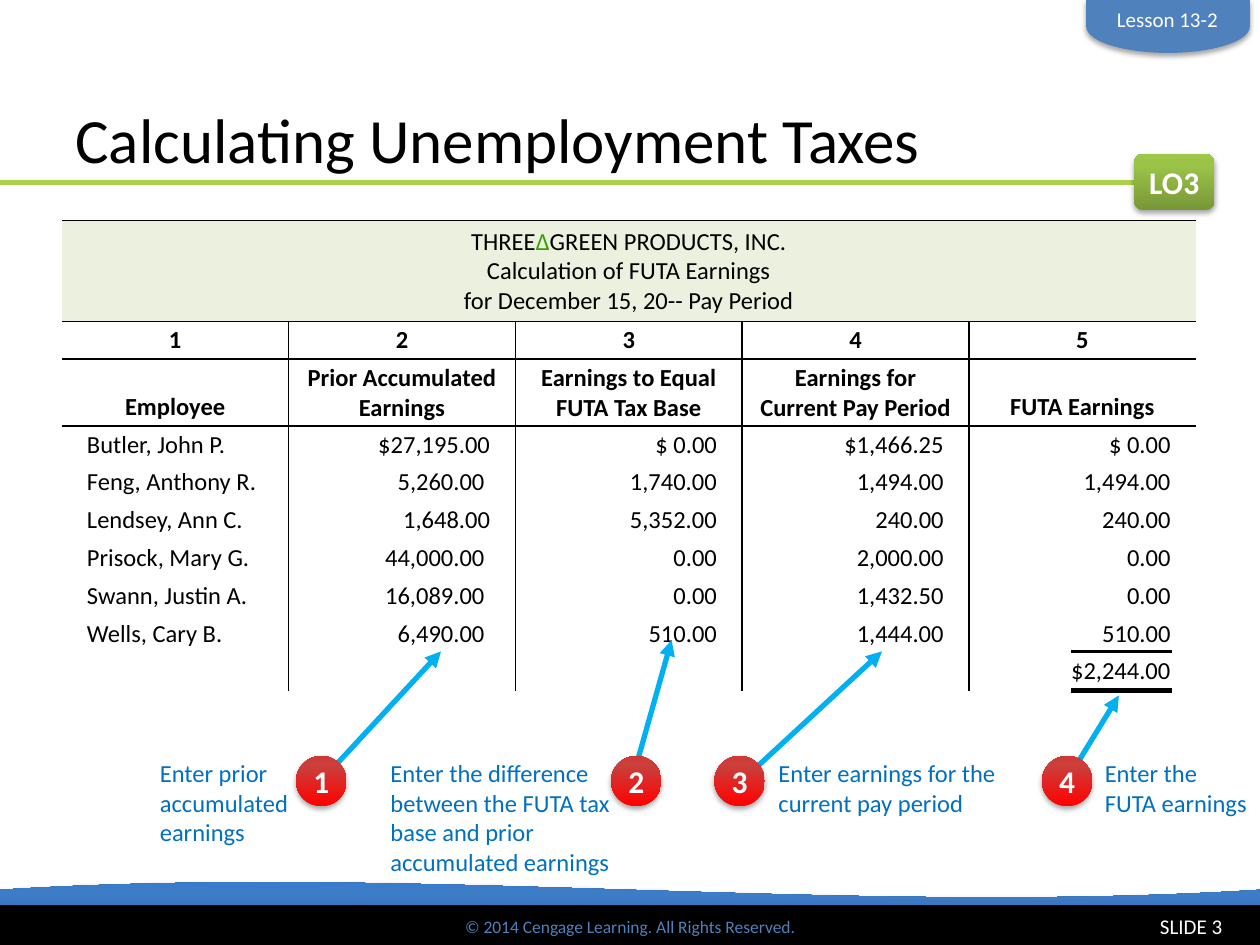
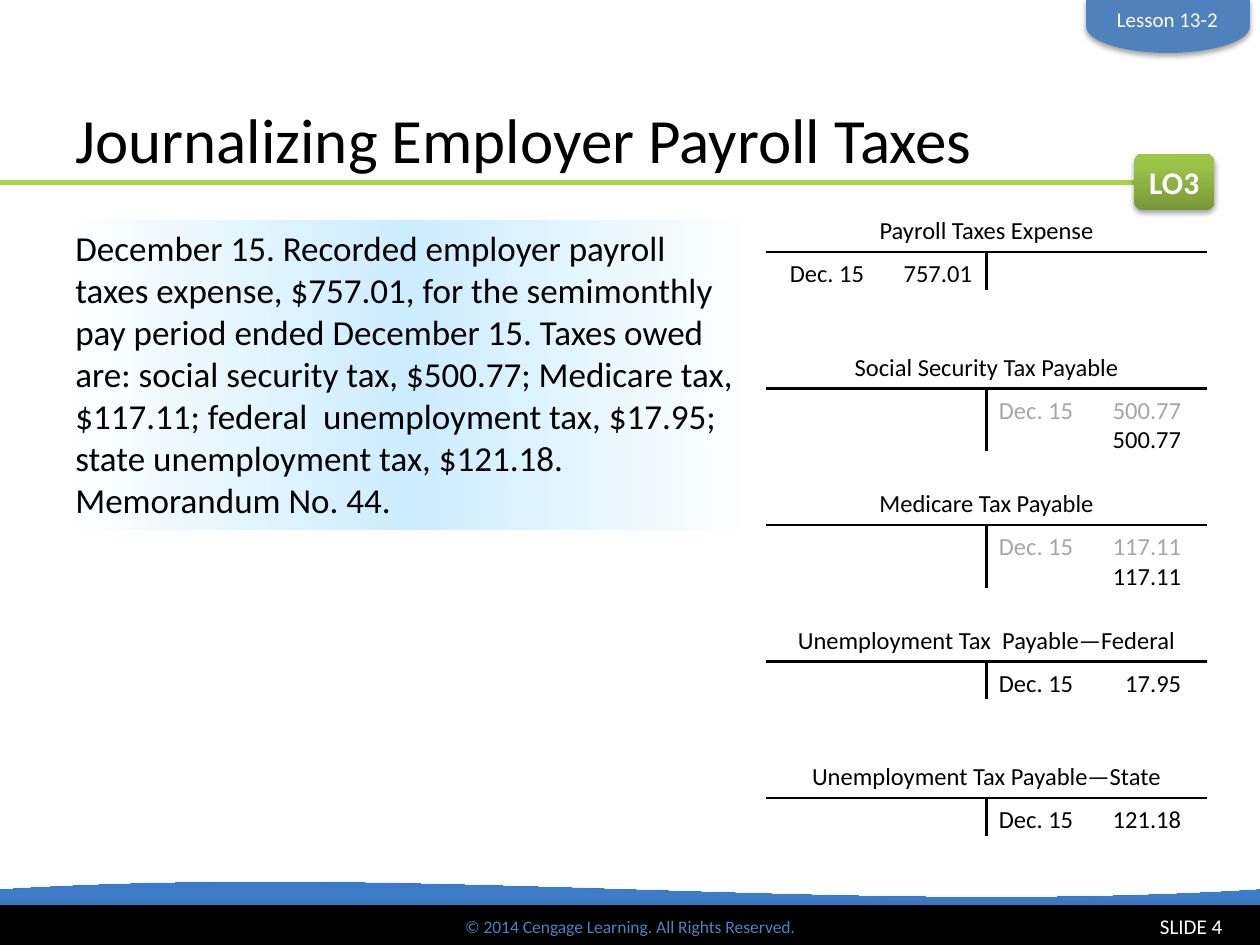
from lxml import etree
from pptx import Presentation
from pptx.dml.color import RGBColor
from pptx.enum.shapes import MSO_CONNECTOR, MSO_SHAPE
from pptx.enum.text import MSO_ANCHOR, PP_ALIGN
from pptx.oxml.ns import qn
from pptx.util import Inches, Pt

# Shared look
FONT = "Calibri"
BLACK, WHITE, GRAY = "000000", "FFFFFF", "A6A6A6"
TAB_BLUE, CALLOUT_BLUE, ARROW_BLUE = "4F81BD", "0070C0", "00B0F0"
RULE_GREEN, HEADING_FILL, DELTA_GREEN = "AAD24B", "EBF1DE", "389F00"
WAVE_STOPS = [(0, "2F5F99"), (80, "3D7CC7"), (100, "3A7CCB")]
BADGE_STOPS = [(0, "779737"), (80, "9BC348"), (100, "9DC746")]
CIRCLE_STOPS = [(0, "FF0000"), (80, "CB3E3A"), (100, "CE3B37")]
ENTRY_STOPS = [(0, WHITE), (50, "CCECFF"), (100, WHITE)]
LEFT, CENTER, RIGHT = PP_ALIGN.LEFT, PP_ALIGN.CENTER, PP_ALIGN.RIGHT
TOP, MIDDLE, BOTTOM = MSO_ANCHOR.TOP, MSO_ANCHOR.MIDDLE, MSO_ANCHOR.BOTTOM

COPYRIGHT = "© 2014 Cengage Learning. All Rights Reserved."
LESSON, OBJECTIVE, FIRST_NUMBER = "Lesson 13-2", "LO3", 3

# Slide content
FUTA_TITLE = "Calculating Unemployment Taxes"
FUTA_HEADING = [
    [("THREE", BLACK), ("Δ", DELTA_GREEN), ("GREEN PRODUCTS, INC.", BLACK)],
    "Calculation of FUTA Earnings",
    "for December 15, 20-- Pay Period",
]
FUTA_ROWS = [
    ["1", "2", "3", "4", "5"],
    ["Employee", "Prior Accumulated\nEarnings", "Earnings to Equal FUTA Tax Base",
     "Earnings for Current Pay Period", "FUTA Earnings"],
    ["Butler, John P.", "$27,195.00", "$ 0.00", "$1,466.25", "$ 0.00"],
    ["Feng, Anthony R.", "5,260.00 ", "1,740.00", "1,494.00", "1,494.00"],
    ["Lendsey, Ann C.", "1,648.00", "5,352.00", "240.00", "240.00"],
    ["Prisock, Mary G.", "44,000.00 ", "0.00", "2,000.00", "0.00"],
    ["Swann, Justin A.", "16,089.00 ", "0.00", "1,432.50", "0.00"],
    ["Wells, Cary B.", "6,490.00 ", "510.00", "1,444.00", "510.00"],
    ["", "", "", "", "$2,244.00"],
]
ROW_HEIGHTS = [0.8, 0.3, 0.53] + [0.3] * 7

# Callouts: text, text left, text width, circle left, arrow start, arrow end
CALLOUTS = [
    ("Enter prior accumulated\vearnings", 1.17, 1.25, 2.35, (2.5, 6.25), (3.5, 5.17)),
    ("Enter the difference between the FUTA tax base and prior accumulated earnings",
     3, 2.08, 4.85, (5, 6.25), (5.33, 5.08)),
    ("Enter earnings for the current pay period", 6.08, 2, 5.67, (5.83, 6.25), (7, 5.17)),
    ("Enter the FUTA earnings", 8.67, 1.33, 8.27, (8.47, 6.19), (8.88, 5.52)),
]

JOURNAL_TITLE = "Journalizing Employer Payroll Taxes"
JOURNAL_ENTRY = (
    "December 15. Recorded employer payroll taxes expense, $757.01, for the semimonthly "
    "pay period ended December 15. Taxes owed are: social security tax, $500.77; "
    "Medicare tax, $117.11; federal  unemployment tax, $17.95; "
    "state unemployment tax, $121.18. Memorandum No. 44."
)
# T accounts: name, left edge of the entries, entries
DEBIT, CREDIT = 6.17, 7.83
ACCOUNTS = [
    ("Payroll Taxes Expense", DEBIT, ["Dec. 15\t 757.01"]),
    ("Social Security Tax Payable", CREDIT, [[("Dec. 15\t500.77", GRAY)], "\t 500.77"]),
    ("Medicare Tax Payable", CREDIT, [[("Dec. 15\t117.11", GRAY)], "\t117.11"]),
    ("Unemployment Tax  Payable—Federal", CREDIT, ["Dec. 15\t 17.95"]),
    ("Unemployment Tax Payable—State", CREDIT, ["Dec. 15\t 121.18"]),
]


def rgb(color):
    return RGBColor.from_string(color)


def add_xml(parent, tag, **attributes):
    child = etree.SubElement(parent, qn(tag))
    for name, value in attributes.items():
        child.set(name, str(value))
    return child


def write(frame, text, size=14, color=BLACK, bold=False, align=LEFT, anchor=TOP,
          wrap=True, insets=None, tab=None):
    """Fill a frame; text is a string or a list of lines (strings or coloured spans)."""
    frame.word_wrap = wrap
    frame.vertical_anchor = anchor
    if insets:
        (frame.margin_left, frame.margin_top,
         frame.margin_right, frame.margin_bottom) = [Inches(inset) for inset in insets]
    lines = text.split("\n") if isinstance(text, str) else text
    for index, line in enumerate(lines):
        para = frame.paragraphs[0] if index == 0 else frame.add_paragraph()
        para.alignment = align
        if tab:
            stops = add_xml(para._p.get_or_add_pPr(), "a:tabLst")
            add_xml(stops, "a:tab", pos=Inches(tab), algn="dec")
        colors = None
        if isinstance(line, str):
            para.text = line
        else:
            colors = [span_color for _, span_color in line]
            for span_text, _ in line:
                para.add_run().text = span_text
        for number, span in enumerate(para.runs):
            span.font.name, span.font.size, span.font.bold = FONT, Pt(size), bold
            span.font.color.rgb = rgb(colors[number] if colors else color)
        if not para.runs:
            add_xml(para._p, "a:endParaRPr", sz=size * 100)


def add_text(page, place, text, **text_format):
    box = page.shapes.add_textbox(*[Inches(length) for length in place])
    write(box.text_frame, text, **text_format)


def add_box(page, kind, place, fill=None, stops=None, angle=270, line=None,
            shadow=False, text=None, **text_format):
    box = page.shapes.add_shape(kind, *[Inches(length) for length in place])
    box.shadow.inherit = False
    if stops:
        box.fill.gradient()
        box.fill.gradient_angle = 360 - angle  # the setter counts counter-clockwise
        stop_list = box._element.spPr.find(".//" + qn("a:gsLst"))
        for stop in list(stop_list):
            stop_list.remove(stop)
        for position, color in stops:
            stop = add_xml(stop_list, "a:gs", pos=position * 1000)
            add_xml(stop, "a:srgbClr", val=color)
    else:
        box.fill.solid()
        box.fill.fore_color.rgb = rgb(fill)
    if line:
        box.line.color.rgb, box.line.width = rgb(line), Pt(2)
    else:
        box.line.fill.background()
    if shadow:
        effects = box._element.spPr.find(qn("a:effectLst"))
        outer = add_xml(effects, "a:outerShdw", blurRad=Pt(3.1), dist=Pt(1.8),
                        dir=5400000, rotWithShape=0)
        add_xml(add_xml(outer, "a:srgbClr", val=BLACK), "a:alpha", val=35000)
    if text:
        write(box.text_frame, text, **text_format)
    return box


def add_line(page, start, end, color=BLACK, width=1.5, arrow=False):
    line = page.shapes.add_connector(
        MSO_CONNECTOR.STRAIGHT, *[Inches(length) for length in (*start, *end)])
    line.line.color.rgb, line.line.width = rgb(color), Pt(width)
    properties = line._element.spPr
    if arrow:
        add_xml(properties.find(qn("a:ln")), "a:tailEnd", type="triangle")
    add_xml(properties, "a:effectLst")


def add_page(deck, title, number):
    """Start a slide with its footer, title rule, lesson tab and objective badge."""
    page = deck.slides.add_slide(deck.slide_layouts[6])
    add_box(page, MSO_SHAPE.WAVE, (0, 7, 10, 0.5), stops=WAVE_STOPS, shadow=True)
    add_box(page, MSO_SHAPE.RECTANGLE, (0, 7.2, 10, 0.3), fill=BLACK, line=BLACK,
            text=COPYRIGHT, size=10, color=TAB_BLUE, align=CENTER, anchor=MIDDLE)
    add_line(page, (0, 1.45), (9.5, 1.45), RULE_GREEN, 3)
    add_text(page, (0.5, 0.2, 8.5, 1.25), title, size=36, anchor=BOTTOM)
    add_box(page, MSO_SHAPE.RECTANGLE, (7.8, 7.2, 2, 0.3), fill=BLACK,
            text=f"SLIDE {number}", size=12, color=WHITE, align=RIGHT, anchor=MIDDLE)
    add_box(page, MSO_SHAPE.ROUNDED_RECTANGLE, (9, 1.22, 0.64, 0.45), stops=BADGE_STOPS,
            shadow=True, text=OBJECTIVE, size=18, color=WHITE, bold=True,
            align=CENTER, wrap=False)
    lesson_tab = add_box(page, MSO_SHAPE.FLOWCHART_DELAY, (9.06, -0.44, 0.42, 1.3),
                         fill=TAB_BLUE, shadow=True)
    lesson_tab.rotation = 90
    add_text(page, (8.76, 0, 1.01, 0.3), LESSON, size=12, color=WHITE,
             align=CENTER, wrap=False)
    return page


def format_cell(cell, text, borders, fill=None, insets=(0.1, 0.05, 0.1, 0.05),
                **text_format):
    (cell.margin_left, cell.margin_top,
     cell.margin_right, cell.margin_bottom) = [Inches(inset) for inset in insets]
    cell.vertical_anchor = text_format.pop("anchor", TOP)
    write(cell.text_frame, text, **text_format)
    properties = cell._tc.get_or_add_tcPr()
    for side in "LRTB":
        edge = add_xml(properties, f"a:ln{side}", w=Pt(1))
        if side in borders:
            add_xml(add_xml(edge, "a:solidFill"), "a:srgbClr", val=BLACK)
        else:
            add_xml(edge, "a:noFill")
    if fill:
        cell.fill.solid()
        cell.fill.fore_color.rgb = rgb(fill)
    else:
        cell.fill.background()


def add_futa_table(page):
    columns = len(FUTA_ROWS[0])
    frame = page.shapes.add_table(len(ROW_HEIGHTS), columns, Inches(0.49), Inches(1.75),
                                  Inches(9), Inches(sum(ROW_HEIGHTS)))
    table = frame.table
    table.first_row = table.horz_banding = False
    for row, height in zip(table.rows, ROW_HEIGHTS):
        row.height = Inches(height)
    for column in range(columns):
        format_cell(table.cell(0, column), FUTA_HEADING if column == 0 else "", "TB",
                    fill=HEADING_FILL, align=CENTER, anchor=MIDDLE)
    table.cell(0, 0).merge(table.cell(0, columns - 1))
    for row, values in enumerate(FUTA_ROWS, start=1):
        for column, value in enumerate(values):
            borders = ("L" if column else "") + ("R" if column < columns - 1 else "")
            if row <= 2:
                format_cell(table.cell(row, column), value, borders + "TB", bold=True,
                            align=CENTER, anchor=BOTTOM, insets=(0.1, 0.03, 0.1, 0.03))
            else:
                format_cell(table.cell(row, column), value,
                            borders + ("T" if row == 3 else ""),
                            align=RIGHT if column else LEFT, insets=(0.2, 0.03, 0.2, 0.03))


def add_callout(page, number, text, left, width, circle_left, start, end):
    add_text(page, (left, 5.97, width, 0.81), text, color=CALLOUT_BLUE)
    add_line(page, start, end, ARROW_BLUE, 3, arrow=True)
    add_box(page, MSO_SHAPE.OVAL, (circle_left, 6, 0.4, 0.4), stops=CIRCLE_STOPS,
            shadow=True, text=str(number), size=18, color=WHITE, bold=True,
            align=CENTER, anchor=MIDDLE, insets=(0, 0, 0, 0))


def add_account(page, top, name, entry_left, entries):
    left, width, middle = 6.08, 3.5, 7.83
    add_text(page, (left, top - 0.34, width, 0.34), name, align=CENTER)
    add_line(page, (left, top), (left + width, top))
    add_text(page, (entry_left, top, 1.66, 0.34), entries, tab=1.2)
    add_line(page, (middle, top), (middle, top + 0.1 + 0.2 * len(entries)))


def main():
    deck = Presentation()
    deck.slide_width, deck.slide_height = Inches(10), Inches(7.5)

    # FUTA earnings table with numbered steps
    page = add_page(deck, FUTA_TITLE, FIRST_NUMBER)
    add_futa_table(page)
    for number, callout in enumerate(CALLOUTS, start=1):
        add_callout(page, number, *callout)
    for top, width in ((5.17, 1.5), (5.48, 3)):  # total rules
        add_line(page, (8.5, top), (9.3, top), width=width)

    # Journal entry beside its T accounts
    page = add_page(deck, JOURNAL_TITLE, FIRST_NUMBER + 1)
    add_box(page, MSO_SHAPE.RECTANGLE, (0.5, 1.75, 5.5, 2.46), stops=ENTRY_STOPS,
            angle=180, text=JOURNAL_ENTRY, size=20)
    for index, account in enumerate(ACCOUNTS):
        add_account(page, 2 + index * 13 / 12, *account)

    deck.save("out.pptx")


if __name__ == "__main__":
    main()
